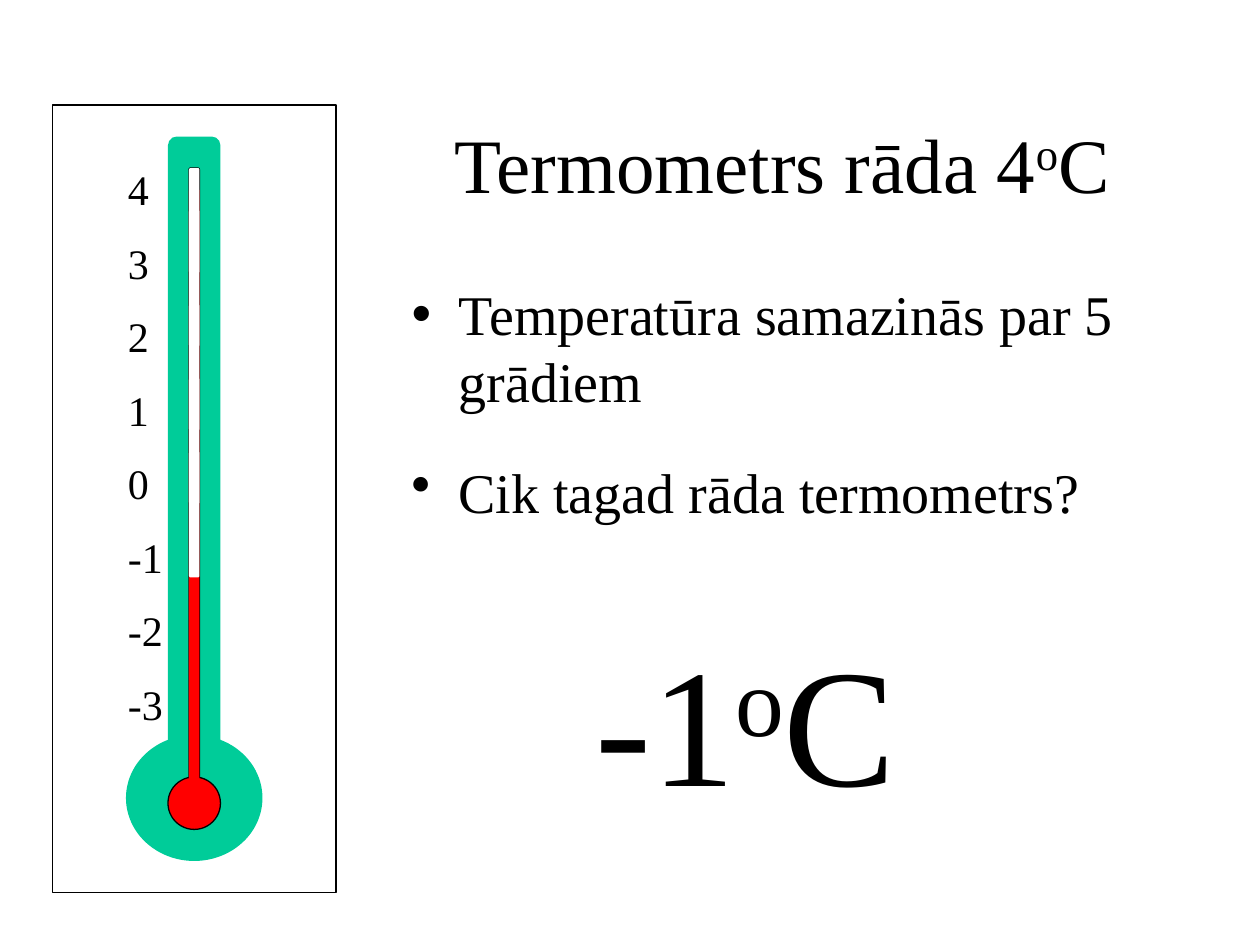
from lxml import etree
from pptx import Presentation
from pptx.dml.color import RGBColor
from pptx.enum.shapes import MSO_SHAPE
from pptx.enum.text import MSO_ANCHOR, MSO_AUTO_SIZE, PP_ALIGN
from pptx.oxml.ns import qn
from pptx.util import Inches, Pt

RECT, ROUND, OVAL = MSO_SHAPE.RECTANGLE, MSO_SHAPE.ROUNDED_RECTANGLE, MSO_SHAPE.OVAL
CENTER, LEFT = PP_ALIGN.CENTER, PP_ALIGN.LEFT
TOP, MIDDLE = MSO_ANCHOR.TOP, MSO_ANCHOR.MIDDLE
NO_FIT = MSO_AUTO_SIZE.NONE

COLORS = {"paper": "FFFFFF", "ink": "000000", "glass": "00CC99", "mercury": "FF0000"}
FONT = "Times New Roman"
U = Inches(1) // 12  # grid: twelve columns and rows to the inch


def rgb(name):
    return RGBColor.from_string(COLORS[name])


def cells(*values):
    return [round(v * U) for v in values]


def add_shape(shapes, kind, box, fill, outlined=False):
    s = shapes.add_shape(kind, *cells(*box))
    s.shadow.inherit = False
    s.fill.solid()
    s.fill.fore_color.rgb = rgb(fill)
    if outlined:
        s.line.color.rgb = rgb("ink")
        s.line.width = Pt(0.75)
    else:
        s.line.fill.background()
    return s


def place(s, box):
    s.left, s.top, s.width, s.height = cells(*box)


def set_frame(tf, anchor=TOP, wrap=True):
    values = {"auto_size": NO_FIT, "vertical_anchor": anchor, "word_wrap": wrap}
    for name, value in values.items():
        setattr(tf, name, value)


def add_run(p, text, size, raised=False):
    r = p.add_run()
    r.text = text
    for name, value in {"size": Pt(size), "name": FONT}.items():
        setattr(r.font, name, value)
    r.font.color.rgb = rgb("ink")
    if raised:
        r._r.get_or_add_rPr().set("baseline", "30000")


def write_degrees(tf, text, size):
    """Centred text followed by a raised degree sign and C."""
    set_frame(tf, MIDDLE, wrap=size < 96)
    p = tf.paragraphs[0]
    p.alignment = CENTER
    add_run(p, text, size)
    add_run(p, "o", size, raised=True)
    add_run(p, "C", size)


def write_bullet(tf, text, size=32):
    set_frame(tf)
    p = tf.paragraphs[0]
    p.alignment = LEFT
    p.space_before = Pt(size * 0.2)
    pPr = p._p.get_or_add_pPr()
    indent = Inches(0.375)
    pPr.set("marL", str(indent))
    pPr.set("indent", str(-indent))
    etree.SubElement(pPr, qn("a:buChar")).set("char", "•")
    add_run(p, text, size)


def add_scale(shapes, box, values, size=24):
    tf = shapes.add_textbox(*cells(*box)).text_frame
    set_frame(tf)
    for i, value in enumerate(values):
        p = tf.paragraphs[0] if i == 0 else tf.add_paragraph()
        p.alignment = LEFT
        p.space_before = Pt(size * 0.55)
        add_run(p, str(value), size)


def add_thermometer(slide, left, top):
    """Framed thermometer, 27 columns by 75 rows."""
    group = slide.shapes.add_group_shape().shapes
    tube = left + 13
    parts = [
        (RECT, (left, top, 27, 75), "paper", True),
        (ROUND, (left + 11, top + 3, 5, 63), "glass", False),
        (OVAL, (left + 7, top + 60, 13, 12), "glass", False),
        (ROUND, (tube, top + 6, 1, 60), "paper", True),
        (OVAL, (left + 11, top + 64, 5, 5), "mercury", True),
    ]
    for part in parts:
        add_shape(group, *part)
    add_scale(group, (left + 6, top + 5, 6, 56.3), range(4, -4, -1))

    # Mercury column, then the emptied stretches of the tube
    add_shape(slide.shapes, ROUND, (tube, top + 8, 1, 57), "mercury")
    for row, rows in [(19, 12), (10, 13), (6, 10), (26, 12), (33, 12)]:
        add_shape(slide.shapes, ROUND, (tube, top + row, 1, rows), "paper")


def add_question(slide, left, top):
    """Title, two bullets and the answer, 73 columns wide."""
    title, body = slide.placeholders
    place(title, (left, top, 73, 15))
    write_degrees(title.text_frame, "Termometrs rāda 4", 44)

    place(body, (left, top + 18, 73, 21))
    write_bullet(body.text_frame, "Temperatūra samazinās par 5 grādiem")
    second = slide.shapes.add_textbox(*cells(left, top + 35, 73, 21))
    write_bullet(second.text_frame, "Cik tagad rāda termometrs?")

    answer = add_shape(slide.shapes, RECT, (left + 18, top + 48, 30, 25), "paper")
    write_degrees(answer.text_frame, "-1", 96)


def main():
    prs = Presentation()
    prs.slide_width, prs.slide_height = Inches(10), Inches(7.5)
    slide = prs.slides.add_slide(prs.slide_layouts[1])
    add_thermometer(slide, 5, 10)
    add_question(slide, 38, 8)
    prs.save("out.pptx")


if __name__ == "__main__":
    main()
